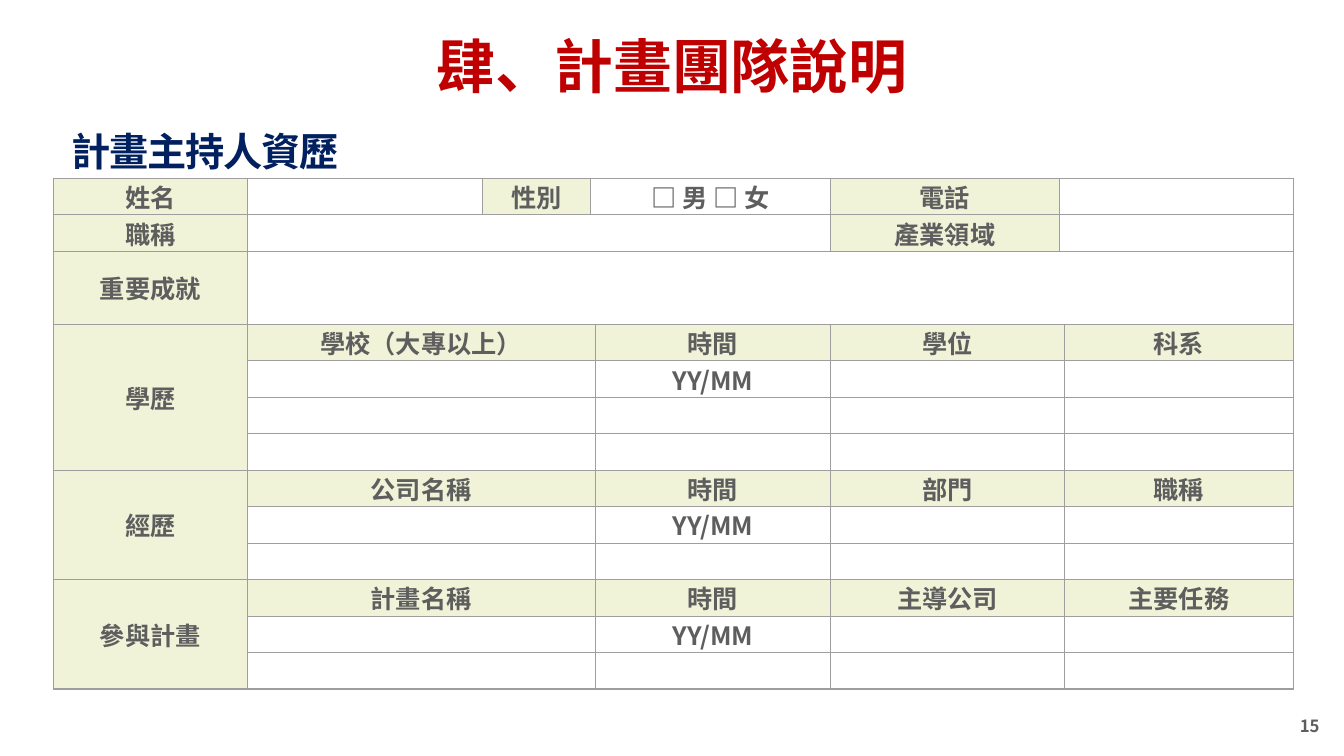
from lxml.etree import SubElement
from pptx import Presentation
from pptx.dml.color import RGBColor
from pptx.enum.text import MSO_ANCHOR, PP_ALIGN
from pptx.oxml.ns import qn
from pptx.util import Inches, Pt

WIDE, HIGH = 13.33, 7.5
FONT = "Noto Sans CJK SC"
RED = RGBColor(0xC0, 0x00, 0x00)
NAVY = RGBColor(0x00, 0x20, 0x60)
GREY = RGBColor(0x5E, 0x5E, 0x5E)
LINE = RGBColor(0x9E, 0x9E, 0x9E)
PALE = RGBColor(0xF0, 0xF3, 0xD8)

COLS = [1.92, 2.33, 1.07, 0.05, 2.33, 2.27, 0.05, 2.27]
ROWS = [1, 1, 2] + [1] * 10
PARTS = [(1, 3), (4, 1), (5, 2), (7, 1)]
TOP = [
    (0, 0, 1, "姓名", True), (0, 1, 1, "", False), (0, 2, 1, "性別", True),
    (0, 3, 2, "□ 男 □ 女", False), (0, 5, 1, "電話", True), (0, 6, 2, "", False),
    (1, 0, 1, "職稱", True), (1, 1, 4, "", False),
    (1, 5, 1, "產業領域", True), (1, 6, 2, "", False),
    (2, 0, 1, "重要成就", True), (2, 1, 7, "", False),
]
GROUPS = [
    ("學歷", 4, ["學校（大專以上）", "時間", "學位", "科系"]),
    ("經歷", 3, ["公司名稱", "時間", "部門", "職稱"]),
    ("參與計畫", 3, ["計畫名稱", "時間", "主導公司", "主要任務"]),
]


def write(frame, text, size=18, color=GREY, align=PP_ALIGN.CENTER, space=None, track=0):
    """Put one bold paragraph in a text frame."""
    para = frame.paragraphs[0]
    para.alignment = align
    if space:
        para.line_spacing = space
    run = para.add_run()
    run.text = text
    font = run.font
    font.name, font.size, font.bold = FONT, Pt(size), True
    font.color.rgb = color
    props = run._r.get_or_add_rPr()
    SubElement(props, qn("a:ea")).set("typeface", FONT)
    if track:
        props.set("spc", str(track))


def label(slide, box, text, pad=0.06, anchor=MSO_ANCHOR.TOP, wrap=True, **style):
    """Add a text box at the given box."""
    frame = slide.shapes.add_textbox(*map(Inches, box)).text_frame
    frame.word_wrap = wrap
    frame.vertical_anchor = anchor
    frame.margin_left = frame.margin_right = Inches(pad)
    frame.margin_top = frame.margin_bottom = Inches(pad)
    write(frame, text, **style)


def dress(cell):
    """Give a cell thin borders, tight margins and no fill."""
    props = cell._tc.get_or_add_tcPr()
    for side in ("a:lnL", "a:lnR", "a:lnT", "a:lnB"):
        edge = SubElement(props, qn(side), w=str(Pt(1)))
        solid = SubElement(edge, qn("a:solidFill"))
        SubElement(solid, qn("a:srgbClr"), val=str(LINE))
    cell.fill.background()
    cell.vertical_anchor = MSO_ANCHOR.MIDDLE
    cell.margin_left = cell.margin_right = Inches(0.02)
    cell.margin_top = cell.margin_bottom = 0


def put(grid, row, col, span, text, shade, deep=1):
    """Merge, shade and fill one area of the table."""
    cell = grid.cell(row, col)
    if span > 1 or deep > 1:
        cell.merge(grid.cell(row + deep - 1, col + span - 1))
    if shade:
        cell.fill.solid()
        cell.fill.fore_color.rgb = PALE
    if text:
        write(cell.text_frame, text)


def group(grid, row, name, deep, heads):
    """Lay out one section: side label, heads and entry rows."""
    put(grid, row, 0, 1, name, True, deep)
    for step in range(deep):
        texts = [heads, ["", "YY/MM", "", ""], [""] * 4][min(step, 2)]
        for (col, span), text in zip(PARTS, texts):
            put(grid, row + step, col, span, text, step == 0)


def form(slide, box):
    """Build the resume table within the box."""
    left, top, width, height = box
    shape = slide.shapes.add_table(len(ROWS), len(COLS), *map(Inches, box))
    grid = shape.table
    grid.first_row = grid.horz_banding = False
    for col, share in zip(grid.columns, COLS):
        col.width = Inches(width * share / sum(COLS))
    for row, share in zip(grid.rows, ROWS):
        row.height = Inches(height * share / sum(ROWS))
    for cell in grid.iter_cells():
        dress(cell)
    for area in TOP:
        put(grid, *area)
    row = 3
    for name, deep, heads in GROUPS:
        group(grid, row, name, deep, heads)
        row += deep


def main():
    """Build and save the slide."""
    deck = Presentation()
    deck.slide_width, deck.slide_height = Inches(WIDE), Inches(HIGH)
    slide = deck.slides.add_slide(deck.slide_layouts[6])
    label(slide, (0, 0.25, WIDE, 0.79), "肆、計畫團隊說明",
          anchor=MSO_ANCHOR.MIDDLE, size=42, color=RED)
    label(slide, (12.83, 7.05, 0.32, 0.31), "15",
          anchor=MSO_ANCHOR.BOTTOM, wrap=False, size=12)
    label(slide, (0.66, 0.98, 12.01, 0.82), "計畫主持人資歷", pad=0.05,
          size=28, color=NAVY, align=PP_ALIGN.LEFT, space=1.5, track=-80)
    form(slide, (0.53, 1.77, 12.3, 5.07))
    deck.save("out.pptx")


if __name__ == "__main__":
    main()
